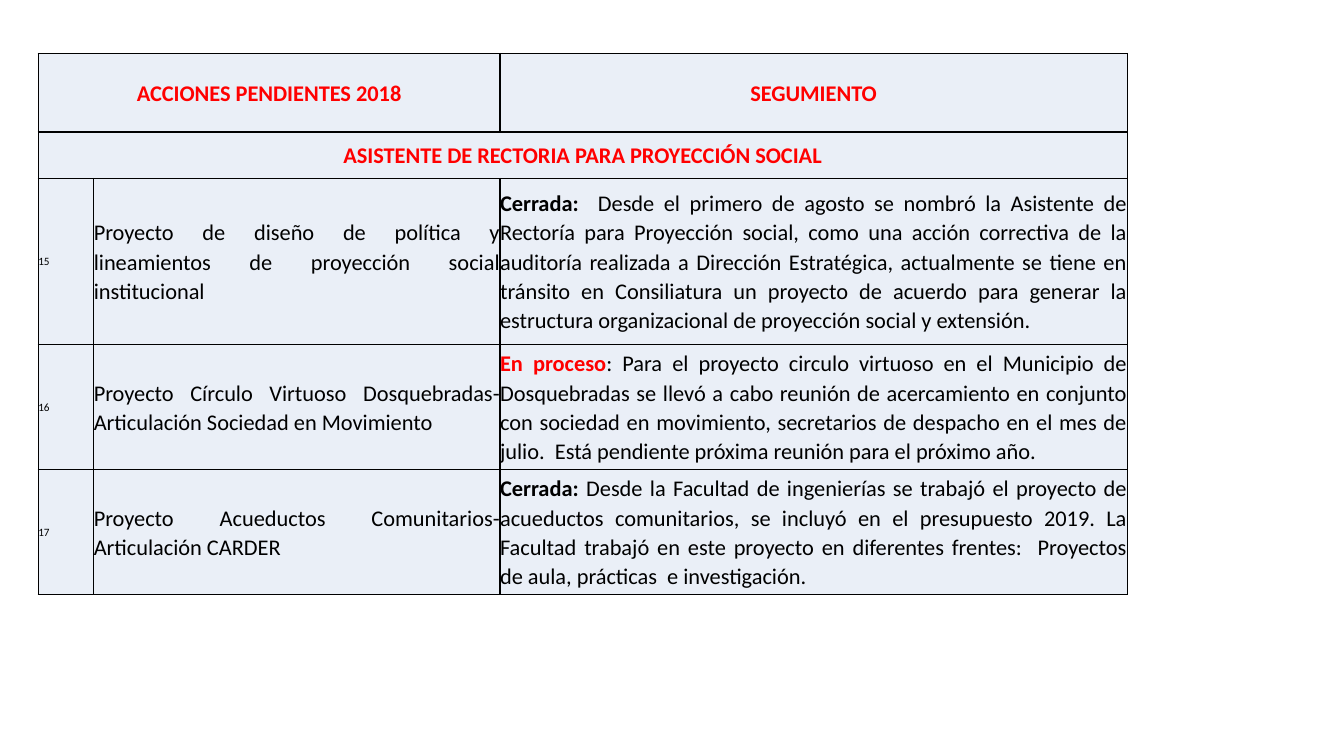
from lxml import etree
from pptx import Presentation
from pptx.dml.color import RGBColor
from pptx.enum.text import MSO_ANCHOR, PP_ALIGN
from pptx.oxml.ns import qn
from pptx.util import Inches, Pt

LEFT, CENTER, JUSTIFY = PP_ALIGN.LEFT, PP_ALIGN.CENTER, PP_ALIGN.JUSTIFY
MIDDLE = MSO_ANCHOR.MIDDLE
RED, BLACK, PALE_BLUE = "FF0000", "000000", "EAEFF7"

HEADINGS = ("ACCIONES PENDIENTES 2018", "SEGUMIENTO")
SECTION = "ASISTENTE DE RECTORIA PARA PROYECCIÓN SOCIAL"
ACTIONS = [
    ("15",
     "Proyecto de diseño de política y lineamientos de proyección social institucional ",
     "Cerrada:  ", BLACK,
     "Desde el primero de agosto se nombró la Asistente de Rectoría para Proyección social, "
     "como una acción correctiva de la auditoría realizada a Dirección Estratégica, "
     "actualmente se tiene en tránsito en Consiliatura un proyecto de acuerdo para generar "
     "la estructura organizacional de proyección social y extensión."),
    ("16",
     "Proyecto Círculo Virtuoso Dosquebradas- Articulación Sociedad en Movimiento",
     "En proceso", RED,
     ": Para el proyecto circulo virtuoso en el Municipio de Dosquebradas se llevó a cabo "
     "reunión de acercamiento en conjunto con sociedad en movimiento, secretarios de despacho "
     "en el mes de julio.  Está pendiente próxima reunión para el próximo año."),
    ("17",
     "Proyecto Acueductos Comunitarios- Articulación CARDER",
     "Cerrada: ", BLACK,
     "Desde la Facultad de ingenierías se trabajó el proyecto de acueductos comunitarios, "
     "se incluyó en el presupuesto 2019. La Facultad trabajó en este proyecto en diferentes "
     "frentes:  Proyectos de aula, prácticas  e investigación."),
]
COLUMN_WIDTHS = (0.55, 4.03, 6.22)
ROW_HEIGHTS = (0.78, 0.46, 1.65, 1.24, 1.24)


def color(value):
    return RGBColor.from_string(value)


def add_text(cell, text, size=16, fill=BLACK, bold=False, align=JUSTIFY):
    paragraph = cell.text_frame.paragraphs[0]
    paragraph.alignment = align
    paragraph.line_spacing = 1.07
    paragraph.space_after = Pt(8)
    run = paragraph.add_run()
    run.text = text
    run.font.name = "Calibri"
    run.font.size = Pt(size)
    run.font.bold = bold
    run.font.color.rgb = color(fill)


def format_cell(cell):
    cell.margin_left = cell.margin_right = cell.margin_top = cell.margin_bottom = 0
    cell.vertical_anchor = MIDDLE
    properties = cell._tc.get_or_add_tcPr()
    for side in ("a:lnL", "a:lnR", "a:lnT", "a:lnB"):
        line = etree.SubElement(properties, qn(side), w=str(Pt(1)))
        solid = etree.SubElement(line, qn("a:solidFill"))
        etree.SubElement(solid, qn("a:srgbClr"), val=BLACK)
    cell.fill.solid()
    cell.fill.fore_color.rgb = color(PALE_BLUE)


def main():
    presentation = Presentation()
    presentation.slide_width, presentation.slide_height = Inches(13.33), Inches(7.5)
    slide = presentation.slides.add_slide(presentation.slide_layouts[6])
    table = slide.shapes.add_table(
        len(ROW_HEIGHTS), len(COLUMN_WIDTHS), Inches(0.38), Inches(0.53),
        Inches(sum(COLUMN_WIDTHS)), Inches(sum(ROW_HEIGHTS))).table
    for column, width in zip(table.columns, COLUMN_WIDTHS):
        column.width = Inches(width)
    for row, height in zip(table.rows, ROW_HEIGHTS):
        row.height = Inches(height)
    for cell in table.iter_cells():
        format_cell(cell)

    table.cell(0, 0).merge(table.cell(0, 1))
    table.cell(1, 0).merge(table.cell(1, 2))
    heading_cells = (table.cell(0, 0), table.cell(0, 2), table.cell(1, 0))
    for cell, text in zip(heading_cells, (*HEADINGS, SECTION)):
        add_text(cell, text, fill=RED, bold=True, align=CENTER)

    for row, (number, action, status, status_color, detail) in enumerate(ACTIONS, 2):
        add_text(table.cell(row, 0), number, size=8, align=LEFT)
        add_text(table.cell(row, 1), action)
        add_text(table.cell(row, 2), status, fill=status_color, bold=True)
        add_text(table.cell(row, 2), detail)

    presentation.save("out.pptx")


if __name__ == "__main__":
    main()
